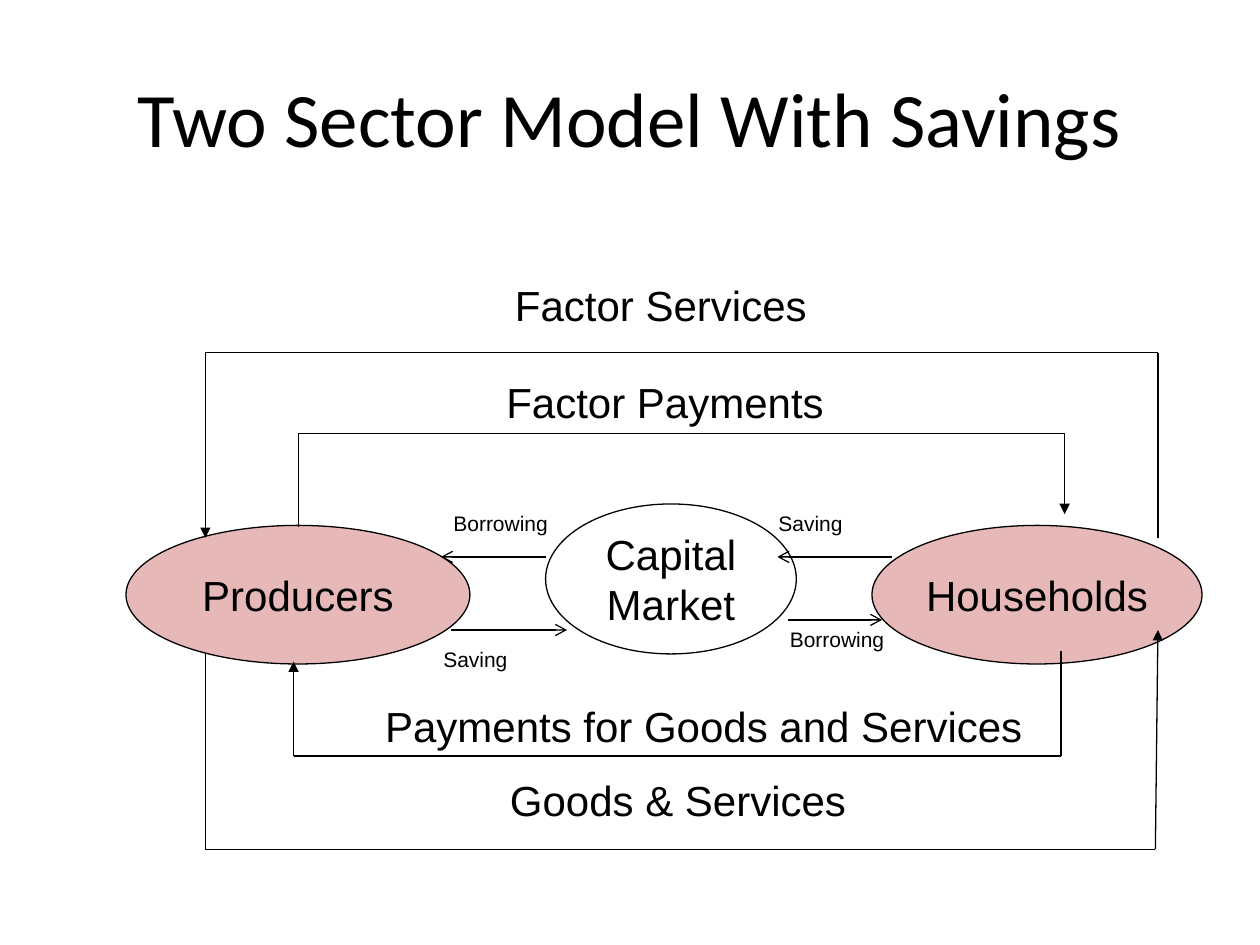
from dataclasses import dataclass
from itertools import pairwise

from lxml import etree
from pptx import Presentation
from pptx.dml.color import RGBColor
from pptx.enum.shapes import MSO_CONNECTOR, MSO_SHAPE
from pptx.enum.text import MSO_ANCHOR, MSO_AUTO_SIZE, PP_ALIGN
from pptx.oxml.ns import qn
from pptx.util import Inches, Pt

OVAL = MSO_SHAPE.OVAL
STRAIGHT = MSO_CONNECTOR.STRAIGHT
MIDDLE = MSO_ANCHOR.MIDDLE
FIT_SHAPE = MSO_AUTO_SIZE.SHAPE_TO_FIT_TEXT
LEFT, CENTER = PP_ALIGN.LEFT, PP_ALIGN.CENTER


@dataclass(frozen=True)
class Theme:
    ink: RGBColor = RGBColor(0x00, 0x00, 0x00)
    sector: RGBColor = RGBColor(0xE6, 0xB9, 0xB8)
    title_font: str = "Calibri"
    body_font: str = "Arial"
    title_size: int = 44
    flow_size: int = 24
    small_size: int = 12
    line_width: float = 0.75


THEME = Theme()


def write(tf, text, size, align, font=THEME.body_font):
    tf.text = text
    for p in tf.paragraphs:
        p.alignment = align
        for r in p.runs:
            r.font.name = font
            r.font.size = Pt(size)
            r.font.color.rgb = THEME.ink


def style_line(line):
    line.color.rgb = THEME.ink
    line.width = Pt(THEME.line_width)


def add_title(s, text):
    sp = s.shapes.title
    sp.left, sp.top, sp.width, sp.height = map(Inches, (0.5, 0.3, 9, 1.25))
    sp.text_frame.vertical_anchor = MIDDLE
    write(sp.text_frame, text, THEME.title_size, CENTER, THEME.title_font)


def add_oval(s, text, box, fill=None):
    sp = s.shapes.add_shape(OVAL, *map(Inches, box))
    sp.shadow.inherit = False
    if fill is None:
        sp.fill.background()
    else:
        sp.fill.solid()
        sp.fill.fore_color.rgb = fill
    style_line(sp.line)
    tf = sp.text_frame
    tf.word_wrap = False
    tf.vertical_anchor = MIDDLE
    write(tf, text, THEME.flow_size, CENTER)


def add_label(s, text, box, size, align, wrap=True):
    tf = s.shapes.add_textbox(*map(Inches, box)).text_frame
    tf.word_wrap = wrap
    tf.auto_size = FIT_SHAPE
    write(tf, text, size, align)


def add_line(s, start, end, head=None):
    cx = s.shapes.add_connector(STRAIGHT, *map(Inches, start + end))
    style_line(cx.line)
    if head:
        etree.SubElement(cx.line._get_or_add_ln(), qn("a:tailEnd"), type=head)
    etree.SubElement(cx._element.spPr, qn("a:effectLst"))


def add_flow(s, points, head):
    segments = list(pairwise(points))
    for start, end in segments[:-1]:
        add_line(s, start, end)
    add_line(s, *segments[-1], head)


def main():
    prs = Presentation()
    prs.slide_width, prs.slide_height = Inches(10), Inches(7.5)
    s = prs.slides.add_slide(prs.slide_layouts[5])
    add_title(s, "Two Sector Model With Savings")

    add_oval(s, "Producers", (1, 4.17, 2.73, 1.1), THEME.sector)
    add_oval(s, "Households", (6.92, 4.17, 2.62, 1.1), THEME.sector)

    sector_flows = [
        [(9.19, 4.27), (9.19, 2.8), (1.63, 2.8), (1.63, 4.27)],
        [(2.37, 4.18), (2.37, 3.44), (8.45, 3.44), (8.45, 4.08)],
        [(8.42, 5.17), (8.42, 6), (2.33, 6), (2.33, 5.25)],
        [(1.63, 5.18), (1.63, 6.74), (9.17, 6.74), (9.19, 5)],
    ]
    for points in sector_flows:
        add_flow(s, points, "triangle")

    add_oval(s, "Capital\nMarket", (4.33, 4, 1.99, 1.19))

    market_flows = [
        [(7.08, 4.42), (6.17, 4.42)],
        [(4.33, 4.42), (3.5, 4.42)],
        [(3.58, 5), (4.5, 5)],
        [(6.25, 4.92), (7, 4.92)],
    ]
    for points in market_flows:
        add_flow(s, points, "arrow")

    add_label(s, "Factor Payments", (3.92, 2.94, 2.75, 0.5),
              THEME.flow_size, LEFT, wrap=False)
    flow_labels = [
        ("Factor Services", 3.58, 2.17, 3.33),
        ("Payments for Goods and Services", 2.67, 5.51, 5.83),
        (" Goods & Services", 3, 6.1, 4.67),
    ]
    for text, x, y, w in flow_labels:
        add_label(s, text, (x, y, w, 0.5), THEME.flow_size, CENTER)

    market_labels = [
        ("Borrowing", 6.17, 4.92, 1),
        ("Saving", 3.42, 5.08, 1.08),
        ("Borrowing", 3.5, 4, 1.08),
        ("Saving", 6.08, 4, 1.08),
    ]
    for text, x, y, w in market_labels:
        add_label(s, text, (x, y, w, 0.3), THEME.small_size, LEFT)

    prs.save("out.pptx")


if __name__ == "__main__":
    main()
